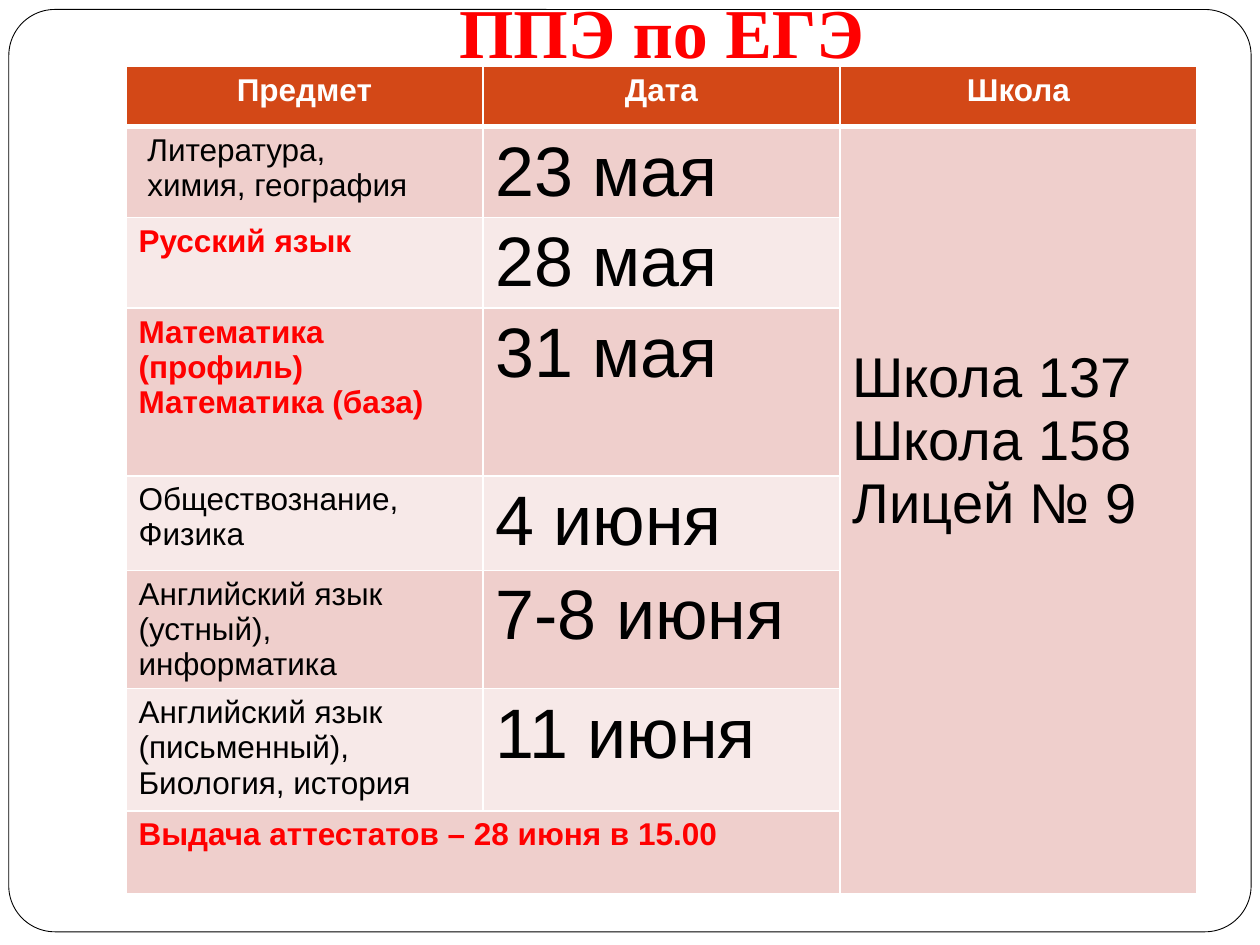
from lxml.etree import SubElement
from pptx import Presentation
from pptx.dml.color import RGBColor
from pptx.enum.shapes import MSO_SHAPE
from pptx.enum.text import MSO_ANCHOR, PP_ALIGN
from pptx.oxml.ns import qn
from pptx.util import Inches, Pt

WIDE, HIGH = Inches(10), Inches(7.5)
RED, BLACK, WHITE = "FF0000", "000000", "FFFFFF"
HEAD, DARK, LIGHT = "D34817", "EFCFCC", "F7E9E8"
ROWS = [0.48, 0.72, 0.72, 1.33, 0.75, 0.94, 0.97, 0.66]
HEADS = ["Предмет", "Дата", "Школа"]
EXAMS = [  # subjects, date, in bold red
    ("Литература,\nхимия, география", "23 мая", False),
    ("Русский язык", "28 мая", True),
    ("Математика (профиль)\nМатематика (база)", "31 мая", True),
    ("Обществознание,\nФизика", "4 июня", False),
    ("Английский язык (устный), информатика", "7-8 июня", False),
    ("Английский язык (письменный), Биология, история", "11 июня", False),
]
SCHOOLS = "Школа 137\nШкола 158\nЛицей № 9"
AWARD = "Выдача аттестатов – 28 июня в 15.00"


def color(code):
    return RGBColor.from_string(code)


def share(x, y, w, h):
    """Turn shares of the slide's size into a box."""
    return [round(part * side) for part, side in zip((x, y, w, h), (WIDE, HIGH) * 2)]


def write(frame, text, size, code, bold=False, align=PP_ALIGN.LEFT, face="Arial"):
    frame.text = text
    for line in frame.paragraphs:
        line.alignment = align
        font = line.font
        font.name, font.size, font.bold = face, Pt(size), bold
        font.color.rgb = color(code)


def edge(cell, low):
    """Draw white borders, the bottom one of the given width in points."""
    props = cell._tc.get_or_add_tcPr()
    for spot, (side, width) in enumerate(zip("LRTB", (1, 1, 1, low))):
        line = SubElement(props, qn(f"a:ln{side}"), w=str(Pt(width)))
        fill = SubElement(line, qn("a:solidFill"))
        SubElement(fill, qn("a:srgbClr"), val=WHITE)
        props.insert(spot, line)


def add_frame(slide, box):
    frame = slide.shapes.add_shape(MSO_SHAPE.ROUNDED_RECTANGLE, *box)
    frame.adjustments[0] = 0.05
    frame.shadow.inherit = False
    frame.fill.solid()
    frame.fill.fore_color.rgb = color(WHITE)
    frame.line.color.rgb = color(BLACK)
    frame.line.width = Pt(0.5)
    slide.shapes._spTree.insert(2, frame._element)


def add_title(slide, box):
    title = slide.shapes.title
    title.left, title.top, title.width, title.height = box
    frame = title.text_frame
    frame.vertical_anchor = MSO_ANCHOR.BOTTOM
    frame.margin_bottom = Inches(0.1)
    write(frame, "ППЭ по ЕГЭ", 40, RED, True, PP_ALIGN.CENTER, "Times New Roman")


def add_plan(slide, box):
    """Place the exam table; rows share the box's height by ROWS."""
    table = slide.shapes.add_table(len(ROWS), len(HEADS), *box).table
    for row, part in zip(table.rows, ROWS):
        row.height = round(box[3] * part / sum(ROWS))
    for r, row in enumerate(table.rows):
        for cell in row.cells:
            cell.fill.solid()
            cell.fill.fore_color.rgb = color(HEAD if r == 0 else DARK if r % 2 else LIGHT)
            edge(cell, 1 if r else 3)

    last = len(ROWS) - 1
    table.cell(1, 2).merge(table.cell(last, 2))
    table.cell(last, 0).merge(table.cell(last, 1))
    for c, head in enumerate(HEADS):
        write(table.cell(0, c).text_frame, head, 18, WHITE, True, PP_ALIGN.CENTER)
    for r, (names, date, key) in enumerate(EXAMS, 1):
        write(table.cell(r, 0).text_frame, names, 18, RED if key else BLACK, key)
        write(table.cell(r, 1).text_frame, date, 40, BLACK)
    table.cell(1, 0).margin_left = Inches(0.17)
    write(table.cell(last, 0).text_frame, AWARD, 18, RED, True)
    school = table.cell(1, 2)
    school.margin_top = Inches(1.75)
    write(school.text_frame, SCHOOLS, 32, BLACK)


def main():
    deck = Presentation()
    deck.slide_width, deck.slide_height = WIDE, HIGH
    slide = deck.slides.add_slide(deck.slide_layouts[5])
    add_frame(slide, share(0.007, 0.01, 0.986, 0.976))
    add_title(slide, share(0.1, 0.04, 0.85, 0.05))
    add_plan(slide, share(0.1, 0.07, 0.85, 0.876))
    deck.save("out.pptx")


if __name__ == "__main__":
    main()
